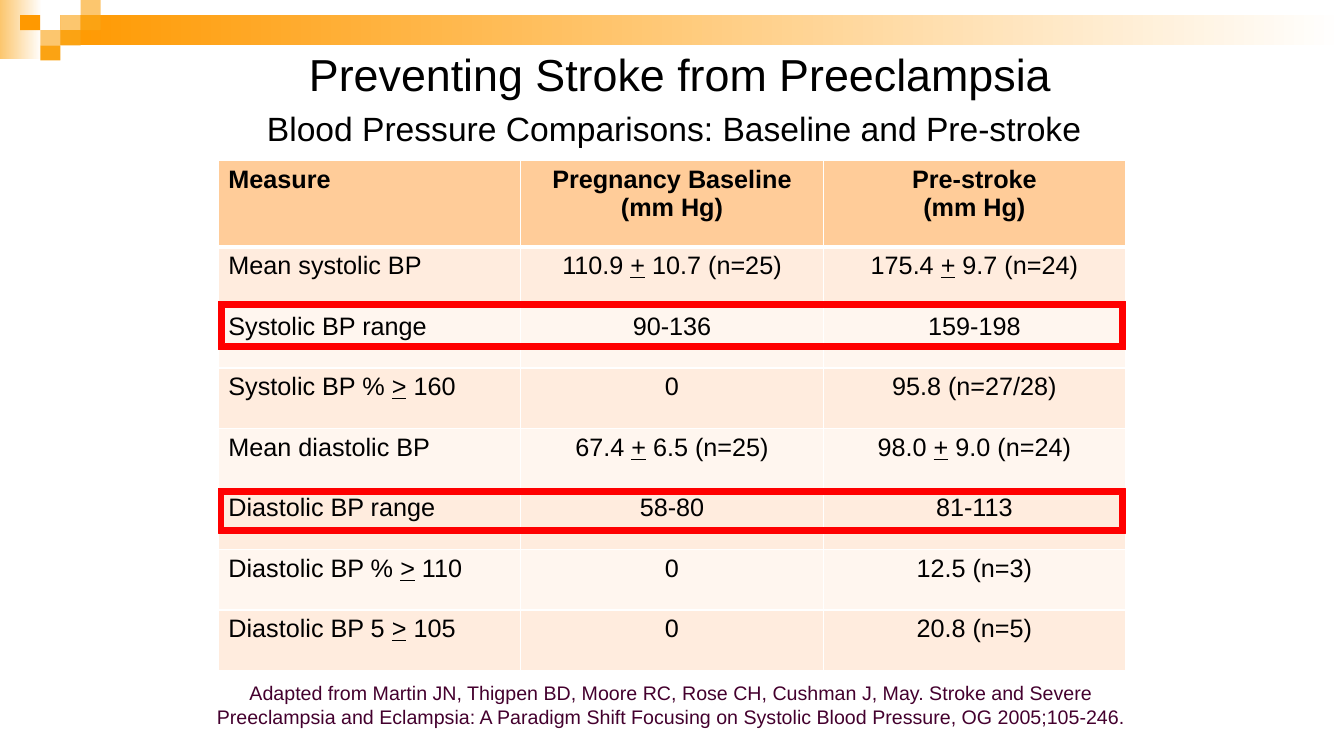
"""Build the slide on blood pressure before stroke in preeclampsia."""
from dataclasses import dataclass
from lxml.etree import SubElement
from pptx import Presentation
from pptx.dml.color import RGBColor
from pptx.enum.shapes import MSO_SHAPE
from pptx.enum.text import MSO_AUTO_SIZE, PP_ALIGN
from pptx.oxml.ns import qn
from pptx.util import Pt

LEFT, WIDTH = 156, 648
TILE_W, TILE_H = 14.4, 10.8
HEAD_H, ROW_H = 62, 43.2
HEAD, DARK, LIGHT = "FFCC99", "FFECDE", "FFF6EF"
GOLD, AMBER, ORANGE = "FCC66E", "FBA313", "FF9900"
WHITE, BLACK, RED = "FFFFFF", "000000", "FF0000"


@dataclass
class Box:
    left: float
    top: float
    width: float
    height: float

    def points(self) -> tuple:
        return Pt(self.left), Pt(self.top), Pt(self.width), Pt(self.height)


@dataclass
class Tile:
    col: int
    row: int
    hue: str


@dataclass
class Label:
    text: str
    box: Box
    size: float
    hue: str = BLACK
    wrap: bool = False


FADES = [(Box(0, 0, 30, 42), GOLD), (Box(43.2, 10.8, 916.8, 21.6), ORANGE)]
TILES = [
    Tile(3, 1, GOLD), Tile(4, 0, GOLD), Tile(4, 1, AMBER), Tile(2, 2, GOLD),
    Tile(1, 1, ORANGE), Tile(3, 2, AMBER), Tile(2, 3, AMBER),
]
LABELS = [
    Label("Preventing Stroke from Preeclampsia", Box(211, 29.5, 550, 46), 32),
    Label("Blood Pressure Comparisons: Baseline and Pre-stroke",
          Box(177, 73.5, 609, 36), 24),
    Label("Adapted from Martin JN, Thigpen BD, Moore RC, Rose CH, Cushman J, May. "
          "Stroke and Severe Preeclampsia and Eclampsia: A Paradigm Shift Focusing "
          "on Systolic Blood Pressure, OG 2005;105-246.",
          Box(138, 483, 683, 41), 14, "44002E", True),
]
ROWS = [
    ("Measure", "Pregnancy Baseline (mm Hg)", "Pre-stroke\n(mm Hg)"),
    ("Mean systolic BP", "110.9 _+_ 10.7 (n=25)", "175.4 _+_ 9.7 (n=24)"),
    ("Systolic BP range", "90-136", "159-198"),
    ("Systolic BP % _>_ 160", "0", "95.8 (n=27/28)"),
    ("Mean diastolic BP", "67.4 _+_ 6.5 (n=25)", "98.0 _+_ 9.0 (n=24)"),
    ("Diastolic BP range", "58-80", "81-113"),
    ("Diastolic BP % _>_ 110", "0", "12.5 (n=3)"),
    ("Diastolic BP 5 _>_ 105", "0", "20.8 (n=5)"),
]
FRAMES = [Box(LEFT, 215.3, WIDTH, 34.6), Box(LEFT, 349.2, WIDTH, 31.7)]


def paint(hue: str) -> RGBColor:
    """Turn a hex string into a colour."""
    return RGBColor.from_string(hue)


def write(frame, text: str, *, size: float = 18, hue: str = BLACK,
          bold: bool = False, align=PP_ALIGN.CENTER) -> None:
    """Write lines of text, with parts between underscores underlined."""
    for num, line in enumerate(text.split("\n")):
        para = frame.add_paragraph() if num else frame.paragraphs[0]
        para.alignment = align
        for part, words in enumerate(line.split("_")):
            run = para.add_run()
            run.text = words
            font = run.font
            font.name, font.size, font.bold = "Arial", Pt(size), bold
            font.underline = part % 2 == 1
            font.color.rgb = paint(hue)


def draw(slide, box: Box, hue: str, kind=MSO_SHAPE.RECTANGLE):
    """Draw a plain filled shape."""
    shape = slide.shapes.add_shape(kind, *box.points())
    shape.shadow.inherit = False
    shape.fill.solid()
    shape.fill.fore_color.rgb = paint(hue)
    shape.line.fill.background()
    return shape


def fade(slide, box: Box, hue: str) -> None:
    """Draw a bar that fades to white from left to right."""
    fill = draw(slide, box, hue).fill
    fill.gradient()
    fill.gradient_angle = 0
    for stop, tone in zip(fill.gradient_stops, (hue, WHITE)):
        stop.color.rgb = paint(tone)


def label(slide, item: Label) -> None:
    """Add a centred text box."""
    frame = slide.shapes.add_textbox(*item.box.points()).text_frame
    frame.word_wrap = item.wrap
    frame.auto_size = MSO_AUTO_SIZE.SHAPE_TO_FIT_TEXT
    write(frame, item.text, size=item.size, hue=item.hue)


def edge(cell, row: int) -> None:
    """Give a cell white borders, thick below the header."""
    props = cell._tc.get_or_add_tcPr()
    thick = {"T": row == 1, "B": row == 0}
    for side in "LRTB":
        width = Pt(3 if thick.get(side) else 1)
        line = SubElement(props, qn(f"a:ln{side}"), w=str(width))
        fill = SubElement(line, qn("a:solidFill"))
        SubElement(fill, qn("a:srgbClr"), val=WHITE)


def chart(slide) -> None:
    """Add the table of readings."""
    box = Box(LEFT, 114.5, WIDTH, HEAD_H + ROW_H * (len(ROWS) - 1))
    table = slide.shapes.add_table(len(ROWS), len(ROWS[0]), *box.points()).table
    table.horz_banding = False
    for col in table.columns:
        col.width = Pt(WIDTH / len(ROWS[0]))
    for row, texts in enumerate(ROWS):
        table.rows[row].height = Pt(ROW_H if row else HEAD_H)
        hue = (DARK if row % 2 else LIGHT) if row else HEAD
        for col, text in enumerate(texts):
            cell = table.cell(row, col)
            edge(cell, row)
            cell.fill.solid()
            cell.fill.fore_color.rgb = paint(hue)
            write(cell.text_frame, text, bold=row == 0,
                  align=PP_ALIGN.CENTER if col else PP_ALIGN.LEFT)


def main() -> None:
    """Build and save the slide."""
    deck = Presentation()
    deck.slide_width, deck.slide_height = Pt(960), Pt(540)
    slide = deck.slides.add_slide(deck.slide_layouts[6])
    for box, hue in FADES:
        fade(slide, box, hue)
    for tile in TILES:
        box = Box(tile.col * TILE_W, tile.row * TILE_H, TILE_W, TILE_H)
        draw(slide, box, tile.hue)
    chart(slide)
    for item in LABELS:
        label(slide, item)
    for box in FRAMES:
        line = draw(slide, box, RED, MSO_SHAPE.FRAME).line
        line.color.rgb = paint(RED)
        line.width = Pt(0.75)
    deck.save("out.pptx")


if __name__ == "__main__":
    main()
